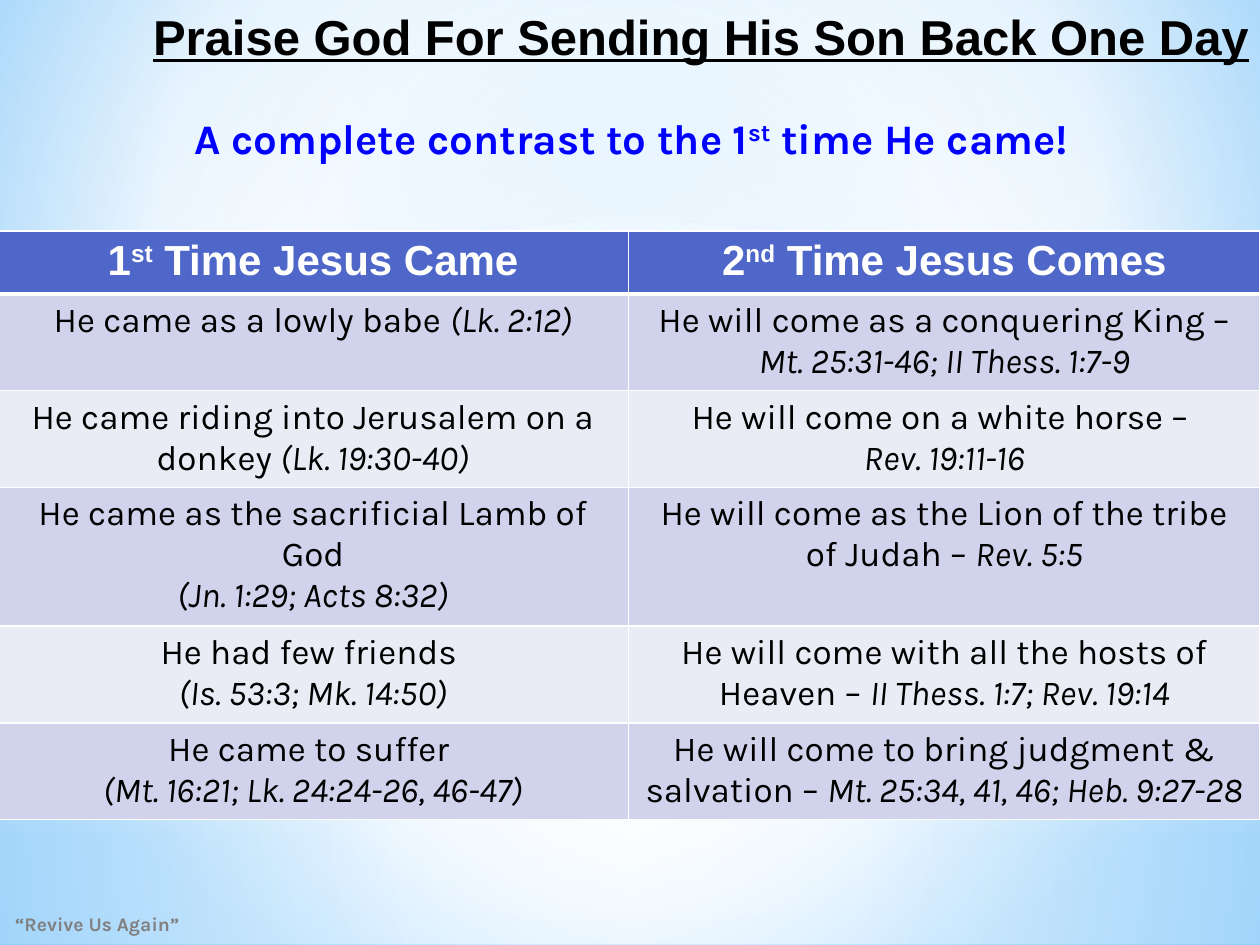
from dataclasses import dataclass, replace

from lxml import etree
from pptx import Presentation
from pptx.dml.color import RGBColor
from pptx.enum.shapes import MSO_SHAPE as Kind
from pptx.enum.text import MSO_ANCHOR as Anchor, PP_ALIGN as Align
from pptx.oxml.ns import qn
from pptx.util import Pt

WIDE, HIGH = 720, 540
CENTER = (50, 50, 50, 50)


@dataclass(frozen=True)
class Style:
    size: float
    font: str
    color: str
    bold: bool = False
    line: bool = False
    italic: bool = False
    align: Align = Align.CENTER


@dataclass(frozen=True)
class Stop:
    pos: int
    color: str
    alpha: int = 100


@dataclass(frozen=True)
class Glow:
    kind: Kind
    top: float
    high: float
    stops: tuple
    focus: tuple | None = CENTER


@dataclass(frozen=True)
class Verse:
    text: str
    ref: str
    apart: bool = False


TITLE = Style(28, "Arial", "000000", bold=True, line=True, align=Align.RIGHT)
LEAD = Style(24, "Karla", "0000FF", bold=True)
NOTE = Style(11, "Karla", "808080", bold=True, align=Align.LEFT)
HEAD = Style(24, "Arial", "FFFFFF", bold=True)
BODY = Style(20, "Karla", "000000")

SKY = (Stop(0, "9ED5FF"), Stop(60, "FFFFFF"), Stop(100, "5BB9FF"))
GLOWS = (
    Glow(Kind.RECTANGLE, 402, 138, (
        Stop(0, "FFFFFF", 91), Stop(37, "FFFFFF", 76), Stop(100, "B4DCFA", 79))),
    Glow(Kind.RECTANGLE, 0, 402, (
        Stop(0, "FFFFFF", 89), Stop(48, "FFFFFF", 62), Stop(100, "B4DCFA", 79))),
    Glow(Kind.RECTANGLE, 297, 180, (
        Stop(0, "FFFFFF", 0), Stop(29, "FFFFFF", 30), Stop(45, "B4DCFA", 40),
        Stop(55, "FFFFFF", 26), Stop(65, "B4DCFA", 60), Stop(100, "FFFFFF", 0)), None),
    Glow(Kind.OVAL, 126, 402, (Stop(0, "FFFFFF"), Stop(56, "FFFFFF", 0))),
)

HEADS = (("1", "st", " Time Jesus Came"), ("2", "nd", " Time Jesus Comes"))
VERSES = (
    (Verse("He came as a lowly babe ", "(Lk. 2:12)"),
     Verse("He will come as a conquering King – ", "Mt. 25:31-46; II Thess. 1:7-9")),
    (Verse("He came riding into Jerusalem on a donkey ", "(Lk. 19:30-40)"),
     Verse("He will come on a white horse – ", "Rev. 19:11-16", True)),
    (Verse("He came as the sacrificial Lamb of God", "(Jn. 1:29; Acts 8:32)", True),
     Verse("He will come as the Lion of the tribe of Judah – ", "Rev. 5:5")),
    (Verse("He had few friends ", "(Is. 53:3; Mk. 14:50)", True),
     Verse("He will come with all the hosts of Heaven – ", "II Thess. 1:7; Rev. 19:14")),
    (Verse("He came to suffer ", "(Mt. 16:21; Lk. 24:24-26, 46-47)", True),
     Verse("He will come to bring judgment & salvation – ",
           "Mt. 25:34, 41, 46; Heb. 9:27-28")),
)


def rgb(code: str) -> RGBColor:
    return RGBColor.from_string(code)


def blend(solid, stops: tuple, focus: tuple | None) -> None:
    """Swap a solid fill element for a gradient, round if it has a focus."""
    grad = etree.Element(qn("a:gradFill"), rotWithShape="1")
    items = etree.SubElement(grad, qn("a:gsLst"))
    for stop in stops:
        item = etree.SubElement(items, qn("a:gs"), pos=str(stop.pos * 1000))
        color = etree.SubElement(item, qn("a:srgbClr"), val=stop.color)
        if stop.alpha < 100:
            etree.SubElement(color, qn("a:alpha"), val=str(stop.alpha * 1000))
    if focus:
        ring = etree.SubElement(grad, qn("a:path"), path="circle")
        sides = {side: str(part * 1000) for side, part in zip("ltrb", focus)}
        etree.SubElement(ring, qn("a:fillToRect"), **sides)
    else:
        etree.SubElement(grad, qn("a:lin"), ang="5400000", scaled="0")
    solid.getparent().replace(solid, grad)


def add_glow(slide, glow: Glow) -> None:
    shape = slide.shapes.add_shape(glow.kind, 0, Pt(glow.top), Pt(WIDE), Pt(glow.high))
    shape.shadow.inherit = False
    shape.line.fill.background()
    shape.fill.solid()
    blend(shape._element.xpath("p:spPr/a:solidFill")[0], glow.stops, glow.focus)


def add_run(para, text: str, style: Style, raised: bool = False) -> None:
    run = para.add_run()
    run.text = text
    font = run.font
    font.size, font.name = Pt(style.size), style.font
    font.bold, font.italic, font.underline = style.bold, style.italic, style.line
    font.color.rgb = rgb(style.color)
    if raised:
        run._r.get_or_add_rPr().set("baseline", "30000")


def write(para, parts: tuple, style: Style) -> None:
    """Write the parts in turn, raising every second one."""
    para.alignment = style.align
    for spot, text in enumerate(parts):
        add_run(para, text, style, raised=spot % 2 == 1)


def add_text(slide, box: tuple, parts: tuple, style: Style, anchor=Anchor.TOP) -> None:
    frame = slide.shapes.add_textbox(*map(Pt, box)).text_frame
    frame.word_wrap = True
    frame.vertical_anchor = anchor
    write(frame.paragraphs[0], parts, style)


def dress(cell, fill: str, top: float, base: float) -> None:
    """Fill a cell and give it white borders."""
    cell.fill.solid()
    cell.fill.fore_color.rgb = rgb(fill)
    props = cell._tc.get_or_add_tcPr()
    for spot, (side, width) in enumerate(zip("LRTB", (1, 1, top, base))):
        line = etree.Element(qn(f"a:ln{side}"), w=str(Pt(width)))
        paint = etree.SubElement(line, qn("a:solidFill"))
        etree.SubElement(paint, qn("a:srgbClr"), val="FFFFFF")
        props.insert(spot, line)


def write_verse(frame, verse: Verse) -> None:
    para = frame.paragraphs[0]
    write(para, (verse.text,), BODY)
    if verse.apart:
        para = frame.add_paragraph()
        para.alignment = BODY.align
    add_run(para, verse.ref, replace(BODY, italic=True))


def add_grid(slide) -> None:
    shape = slide.shapes.add_table(
        len(VERSES) + 1, len(HEADS), Pt(-1.5), Pt(132), Pt(721.5), Pt(336))
    table = shape.table
    for row in table.rows:
        row.height = Pt(29.5)
    shape.height = Pt(336)
    for col, parts in enumerate(HEADS):
        cell = table.cell(0, col)
        dress(cell, "4E67C8", 1, 3)
        write(cell.text_frame.paragraphs[0], parts, HEAD)
    for row, pair in enumerate(VERSES, 1):
        fill = "D0D3EB" if row % 2 else "E9EBF5"
        for col, verse in enumerate(pair):
            cell = table.cell(row, col)
            dress(cell, fill, 3 if row == 1 else 1, 1)
            write_verse(cell.text_frame, verse)


def main() -> None:
    deck = Presentation()
    deck.slide_width, deck.slide_height = Pt(WIDE), Pt(HIGH)
    slide = deck.slides.add_slide(deck.slide_layouts[6])
    slide.background.fill.solid()
    blend(slide._element.xpath("p:cSld/p:bg//a:solidFill")[0], SKY, (20, 10, 20, 60))
    for glow in GLOWS:
        add_glow(slide, glow)
    add_text(slide, (1.5, 515.5, 264, 24.5), ("“Revive Us Again”",), NOTE, Anchor.MIDDLE)
    add_text(slide, (0.7, 0, 720, 78.5),
             ("Praise God For Sending His Son Back One Day",), TITLE)
    add_text(slide, (-0.7, 60.5, 723, 36),
             ("A complete contrast to the 1", "st", " time He came!"), LEAD)
    add_grid(slide)
    deck.save("out.pptx")


if __name__ == "__main__":
    main()
